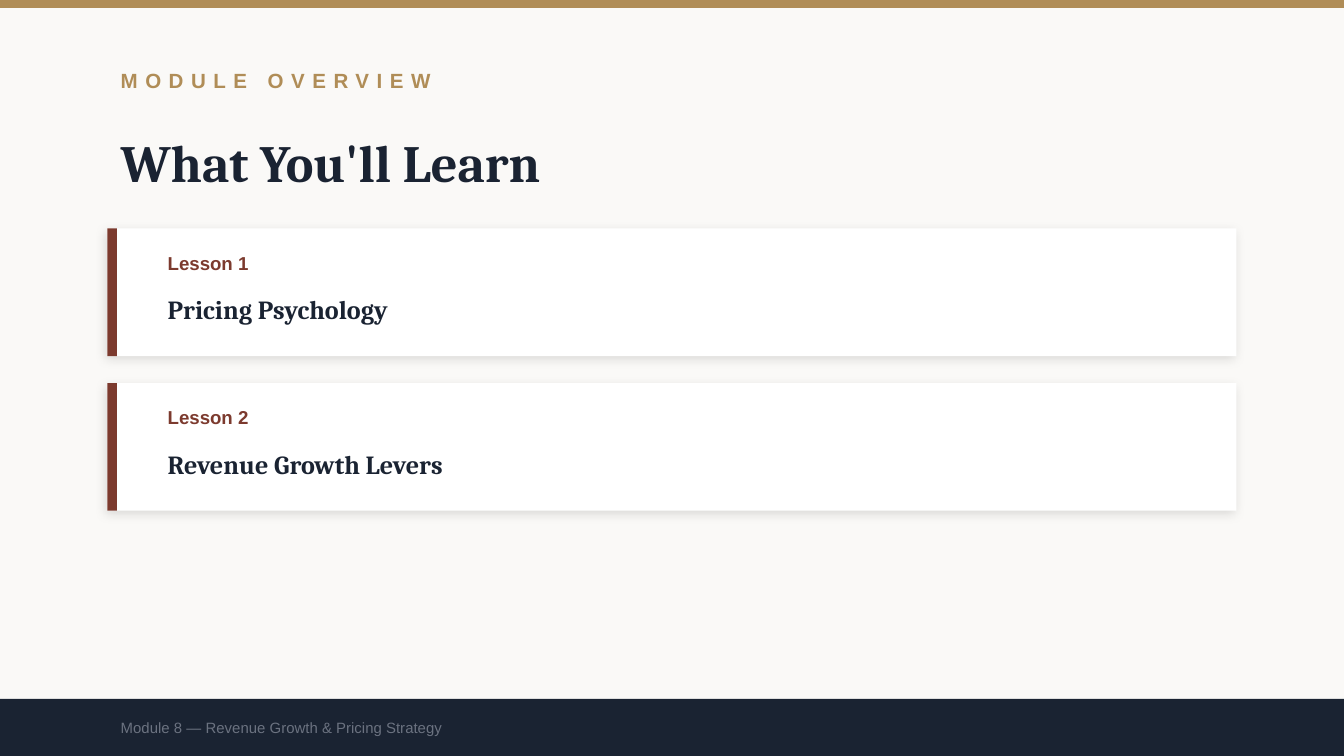
from lxml.etree import SubElement
from pptx import Presentation
from pptx.dml.color import RGBColor
from pptx.enum.shapes import MSO_SHAPE
from pptx.enum.text import MSO_ANCHOR
from pptx.oxml.ns import qn
from pptx.util import Inches, Pt

# Content
KICKER = "MODULE OVERVIEW"
TITLE = "What You'll Learn"
LESSONS = [("Lesson 1", "Pricing Psychology"),
           ("Lesson 2", "Revenue Growth Levers")]
FOOTER = "Module 8 — Revenue Growth & Pricing Strategy"

# Colours and text formats
PAPER = RGBColor(0xFA, 0xF9, 0xF7)
WHITE = RGBColor(0xFF, 0xFF, 0xFF)
GOLD = RGBColor(0xB0, 0x8D, 0x57)
NAVY = RGBColor(0x1A, 0x23, 0x32)
RUST = RGBColor(0x7C, 0x3A, 0x2E)
GRAY = RGBColor(0x6B, 0x72, 0x80)
FORMATS = {
    "kicker": (GOLD, dict(name="Arial", size=Pt(11), bold=True)),
    "title": (NAVY, dict(name="Cambria", size=Pt(28), bold=True)),
    "label": (RUST, dict(name="Arial", size=Pt(10), bold=True)),
    "lesson": (NAVY, dict(name="Cambria", size=Pt(14), bold=True)),
    "footer": (GRAY, dict(name="Arial", size=Pt(8), bold=False)),
}

# Layout in inches, on a 16:9 slide
WIDTH = 10
HEIGHT = WIDTH * 9 / 16
MARGIN = 0.8
CARD_TOP, CARD_H, CARD_GAP = 1.7, 0.95, 0.2
CARD_W = WIDTH - 2 * MARGIN
CARD_TEXT_X = MARGIN + 0.35
FOOTER_TOP = 5.2
FOOTER_H = HEIGHT - FOOTER_TOP


def add_rect(s, x, y, w, h, color):
    sp = s.shapes.add_shape(MSO_SHAPE.RECTANGLE, *map(Inches, (x, y, w, h)))
    sp.fill.solid()
    sp.fill.fore_color.rgb = color
    sp.line.fill.background()
    sp.shadow.inherit = False
    return sp


def add_soft_shadow(sp):
    effects = sp._element.spPr.find(qn("a:effectLst"))
    shadow = SubElement(effects, qn("a:outerShdw"), blurRad=str(Pt(6)),
                        dist=str(Pt(2)), dir=str(135 * 60000),
                        algn="bl", rotWithShape="0")
    black = SubElement(shadow, qn("a:srgbClr"), val="000000")
    SubElement(black, qn("a:alpha"), val="12000")


def add_text(s, x, y, w, h, text, style):
    tf = s.shapes.add_textbox(*map(Inches, (x, y, w, h))).text_frame
    tf.word_wrap = True
    tf.vertical_anchor = MSO_ANCHOR.MIDDLE
    r = tf.paragraphs[0].add_run()
    r.text = text
    color, font = FORMATS[style]
    for key, value in font.items():
        setattr(r.font, key, value)
    r.font.color.rgb = color
    return r


prs = Presentation()
prs.slide_width, prs.slide_height = Inches(WIDTH), Inches(HEIGHT)
s = prs.slides.add_slide(prs.slide_layouts[6])
s.background.fill.solid()
s.background.fill.fore_color.rgb = PAPER

# Top band and headings
add_rect(s, 0, 0, WIDTH, 0.06, GOLD)
kicker = add_text(s, MARGIN, 0.4, 8, 0.4, KICKER, "kicker")
kicker._r.get_or_add_rPr().set("spc", "400")
add_text(s, MARGIN, 0.9, 8, 0.6, TITLE, "title")

# Lesson cards
for i, (label, lesson) in enumerate(LESSONS):
    y = CARD_TOP + i * (CARD_H + CARD_GAP)
    add_soft_shadow(add_rect(s, MARGIN, y, CARD_W, CARD_H, WHITE))
    add_rect(s, MARGIN, y, 0.07, CARD_H, RUST)
    add_text(s, CARD_TEXT_X, y + 0.08, 7, 0.35, label, "label")
    add_text(s, CARD_TEXT_X, y + 0.4, 7.8, 0.4, lesson, "lesson")

# Footer
add_rect(s, 0, FOOTER_TOP, WIDTH, FOOTER_H, NAVY)
add_text(s, MARGIN, FOOTER_TOP, 8, FOOTER_H, FOOTER, "footer")

prs.save("out.pptx")
